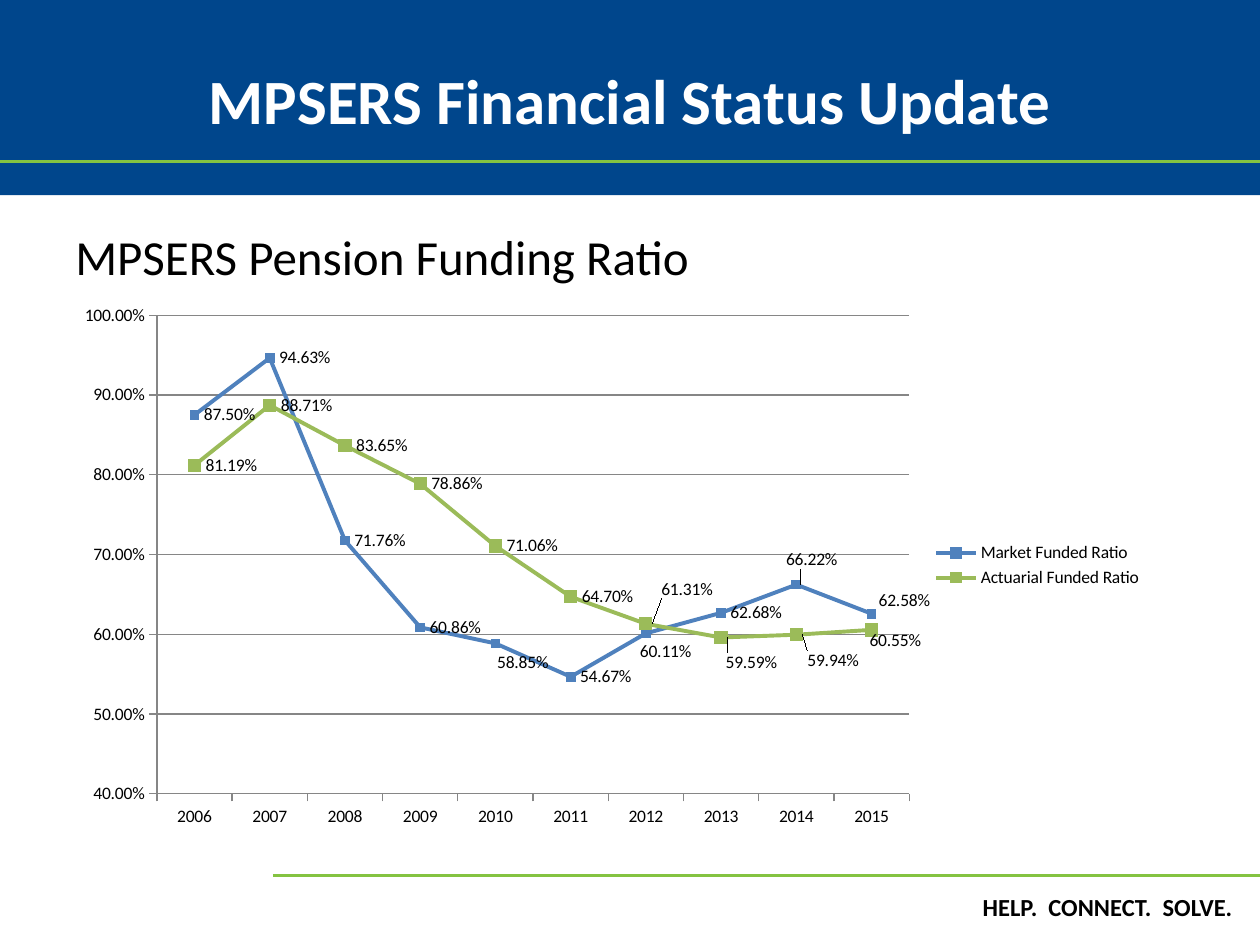
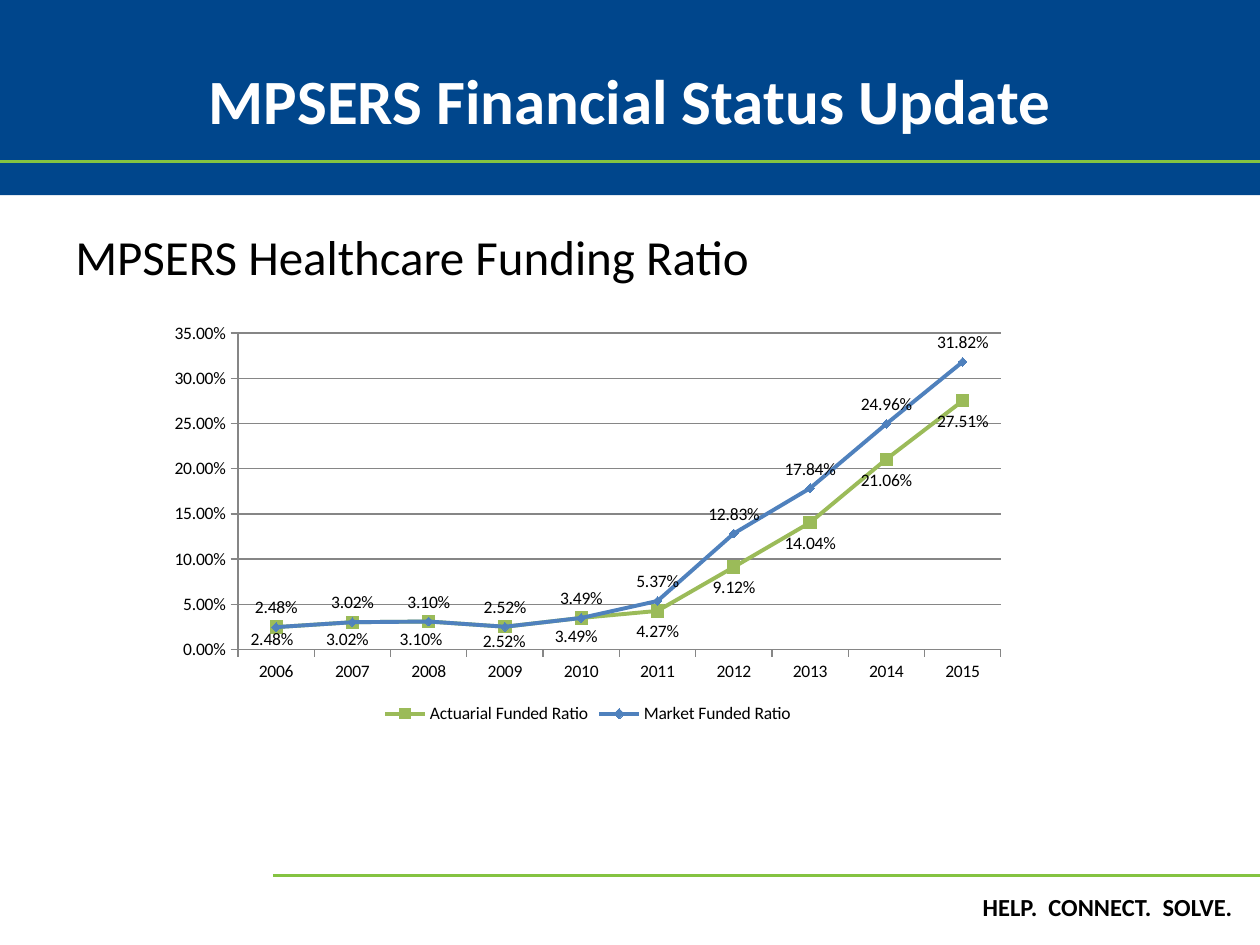
from dataclasses import dataclass

from lxml.etree import SubElement
from pptx import Presentation
from pptx.chart.data import CategoryChartData
from pptx.dml.color import RGBColor
from pptx.enum.chart import (XL_CHART_TYPE, XL_LABEL_POSITION, XL_LEGEND_POSITION,
                             XL_MARKER_STYLE, XL_TICK_MARK)
from pptx.enum.shapes import MSO_CONNECTOR, MSO_SHAPE
from pptx.enum.text import MSO_ANCHOR, PP_ALIGN
from pptx.oxml.ns import qn
from pptx.util import Inches, Pt


@dataclass(frozen=True)
class Theme:
    font: str = "Calibri"
    band: RGBColor = RGBColor(0x00, 0x46, 0x8C)
    rule: RGBColor = RGBColor(0x84, 0xC3, 0x41)
    ink: RGBColor = RGBColor(0, 0, 0)
    paper: RGBColor = RGBColor(255, 255, 255)
    grid: RGBColor = RGBColor(0x86, 0x86, 0x86)
    market: RGBColor = RGBColor(0x4F, 0x81, 0xBD)
    actuarial: RGBColor = RGBColor(0x9B, 0xBB, 0x59)
    title_size: int = 36
    heading_size: int = 28
    tagline_size: int = 14
    chart_size: int = 10


@dataclass(frozen=True)
class Ratio:
    """One funding ratio; moved_labels maps a year to a label shift in % of the chart."""
    name: str
    percents: tuple
    color: RGBColor
    marker: XL_MARKER_STYLE
    marker_size: int
    label_side: XL_LABEL_POSITION
    moved_labels: dict


@dataclass(frozen=True)
class RatioChart:
    """The plot area is left, top, width and height in % of the chart."""
    heading: str
    cells: tuple
    plot_area: tuple
    low: float
    high: float
    step: float
    legend_side: XL_LEGEND_POSITION
    ratios: tuple


THEME = Theme()
COLUMNS, ROWS = 120, 90
WIDTH, HEIGHT = Inches(10), Inches(7.5)
YEARS = range(2006, 2016)

PENSION = RatioChart(
    "MPSERS Pension Funding Ratio", (6, 28, 104, 51.7), (8.6, 3.9, 68.9, 88.2),
    0.4, 1, 0.1, XL_LEGEND_POSITION.RIGHT,
    (Ratio("Market Funded Ratio",
           (87.50, 94.63, 71.76, 60.86, 58.85, 54.67, 60.11, 62.68, 66.22, 62.58),
           THEME.market, XL_MARKER_STYLE.SQUARE, 5, XL_LABEL_POSITION.RIGHT,
           {2010: (-0.7, 3.5), 2012: (-1.4, 3.3), 2014: (-1.8, -4.6), 2015: (-0.2, -2.4)}),
     Ratio("Actuarial Funded Ratio",
           (81.19, 88.71, 83.65, 78.86, 71.06, 64.70, 61.31, 59.59, 59.94, 60.55),
           THEME.actuarial, XL_MARKER_STYLE.SQUARE, 7, XL_LABEL_POSITION.RIGHT,
           {2012: (0.4, -6.4), 2013: (-0.6, 4.6), 2014: (0, 4.8), 2015: (-1.2, 2)})))

HEALTHCARE = RatioChart(
    "MPSERS Healthcare Funding Ratio", (15, 30, 82, 39.4), (9.35, 4.4, 88.6, 76.5),
    0, 0.35, 0.05, XL_LEGEND_POSITION.BOTTOM,
    (Ratio("Actuarial Funded Ratio",
           (2.48, 3.02, 3.10, 2.52, 3.49, 4.27, 9.12, 14.04, 21.06, 27.51),
           THEME.actuarial, XL_MARKER_STYLE.SQUARE, 7, XL_LABEL_POSITION.BELOW,
           {2006: (-0.5, -2), 2007: (-0.6, -0.8), 2008: (-0.9, -0.8),
            2009: (-0.1, -1.5), 2010: (-0.6, -0.5)}),
     Ratio("Market Funded Ratio",
           (2.48, 3.02, 3.10, 2.52, 3.49, 5.37, 12.83, 17.84, 24.96, 31.82),
           THEME.market, XL_MARKER_STYLE.DIAMOND, 5, XL_LABEL_POSITION.ABOVE, {})))


def at(column, row):
    return round(WIDTH * column / COLUMNS), round(HEIGHT * row / ROWS)


def box(left, top, width, height):
    return *at(left, top), *at(width, height)


def style_font(font, size, color=THEME.ink, bold=False):
    font.name, font.size, font.bold = THEME.font, Pt(size), bold
    font.color.rgb = color


def style_line(line, color, points):
    line.color.rgb = color
    line.width = Pt(points)


def add_text(slide, cells, words, size, color=THEME.ink, bold=False,
             align=PP_ALIGN.LEFT, anchor=MSO_ANCHOR.TOP):
    frame = slide.shapes.add_textbox(*box(*cells)).text_frame
    frame.word_wrap = True
    frame.vertical_anchor = anchor
    frame.text = words
    paragraph = frame.paragraphs[0]
    paragraph.alignment = align
    style_font(paragraph.runs[0].font, size, color, bold)


def add_rule(slide, first_column, row):
    """Draw a green line from a column to the right edge."""
    rule = slide.shapes.add_connector(MSO_CONNECTOR.STRAIGHT,
                                      *at(first_column, row), *at(COLUMNS, row))
    style_line(rule.line, THEME.rule, 2)
    SubElement(rule._element.spPr, qn("a:effectLst"))


def add_frame(slide, title):
    """Add the band, rules, tagline and title that every slide has."""
    band = slide.shapes.add_shape(MSO_SHAPE.RECTANGLE, *box(0, -0.25, COLUMNS, 18.85))
    band.shadow.inherit = False
    band.fill.solid()
    band.fill.fore_color.rgb = THEME.band
    band.line.fill.background()
    add_rule(slide, 0, 15.36)
    add_rule(slide, 26, 83.4)
    add_text(slide, (92.4, 84.4, 28, 4), "HELP.  CONNECT.  SOLVE.",
             THEME.tagline_size, bold=True)
    add_text(slide, (6, 2, 108, 15), title, THEME.title_size, THEME.paper, True,
             PP_ALIGN.CENTER, MSO_ANCHOR.MIDDLE)


def fill_layout(layout, **settings):
    manual = SubElement(layout, qn("c:manualLayout"))
    for tag, value in settings.items():
        SubElement(manual, qn(f"c:{tag}")).set("val", str(value))


def fix_plot_area(chart, plot_area):
    area = chart._chartSpace.chart.plotArea
    layout = area.find(qn("c:layout"))
    if layout is None:
        layout = SubElement(area, qn("c:layout"))
        area.insert(0, layout)
    x, y, w, h = (percent / 100 for percent in plot_area)
    fill_layout(layout, layoutTarget="inner", xMode="edge", yMode="edge",
                x=x, y=y, w=w, h=h)


def move_label(series, ratio, year):
    index = YEARS.index(year)
    label = series.points[index].data_label
    style_font(label.font, THEME.chart_size)
    label.position = ratio.label_side
    element = series._element.xpath(f"c:dLbls/c:dLbl[c:idx/@val='{index}']")[0]
    layout = SubElement(element, qn("c:layout"))
    element.insert(1, layout)
    x, y = (percent / 100 for percent in ratio.moved_labels[year])
    fill_layout(layout, x=x, y=y)


def style_series(series, ratio):
    series.smooth = False
    style_line(series.format.line, ratio.color, 2.25)
    marker = series.marker
    marker.style, marker.size = ratio.marker, ratio.marker_size
    marker.format.fill.solid()
    marker.format.fill.fore_color.rgb = ratio.color
    style_line(marker.format.line, ratio.color, 0.75)
    labels = series.data_labels
    labels.show_value = True
    labels.position = ratio.label_side
    labels.number_format, labels.number_format_is_linked = "0.00%", False
    style_font(labels.font, THEME.chart_size)
    for year in ratio.moved_labels:
        move_label(series, ratio, year)


def style_axes(chart, content):
    for axis in (chart.category_axis, chart.value_axis):
        axis.major_tick_mark = XL_TICK_MARK.OUTSIDE
        axis.minor_tick_mark = XL_TICK_MARK.NONE
        style_line(axis.format.line, THEME.grid, 0.75)
    values = chart.value_axis
    values.minimum_scale, values.maximum_scale = content.low, content.high
    values.major_unit = content.step
    values.has_major_gridlines = True
    style_line(values.major_gridlines.format.line, THEME.grid, 0.75)
    values.tick_labels.number_format = "0.00%"
    values.tick_labels.number_format_is_linked = False


def add_ratio_chart(slide, content):
    table = CategoryChartData(number_format="0.00%")
    table.categories = [str(year) for year in YEARS]
    for ratio in content.ratios:
        table.add_series(ratio.name, [round(p / 100, 4) for p in ratio.percents])
    chart = slide.shapes.add_chart(XL_CHART_TYPE.LINE_MARKERS,
                                   *box(*content.cells), table).chart
    style_font(chart.font, THEME.chart_size)
    chart.has_title = False
    chart.has_legend = True
    chart.legend.position = content.legend_side
    chart.legend.include_in_layout = False
    chart.plots[0].vary_by_categories = False
    style_axes(chart, content)
    fix_plot_area(chart, content.plot_area)
    for series, ratio in zip(chart.plots[0].series, content.ratios):
        style_series(series, ratio)


def main():
    deck = Presentation()
    deck.slide_width, deck.slide_height = WIDTH, HEIGHT
    for content in (PENSION, HEALTHCARE):
        slide = deck.slides.add_slide(deck.slide_layouts[6])
        add_frame(slide, "MPSERS Financial Status Update")
        add_text(slide, (6, 21, 108, 7), content.heading, THEME.heading_size)
        add_ratio_chart(slide, content)
    deck.save("out.pptx")


if __name__ == "__main__":
    main()
